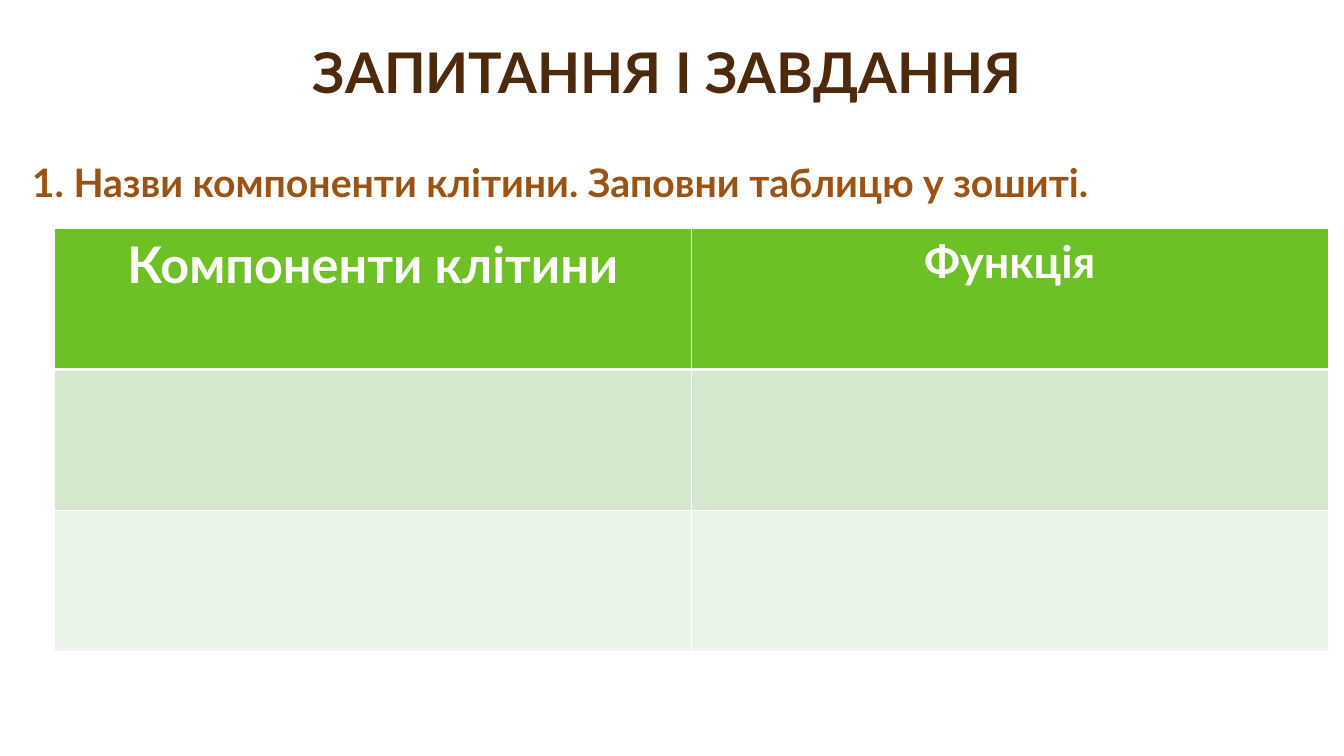
from lxml import etree
from pptx import Presentation
from pptx.dml.color import RGBColor
from pptx.enum.text import MSO_ANCHOR, MSO_AUTO_SIZE, PP_ALIGN
from pptx.oxml.ns import qn
from pptx.util import Pt

CENTER, LEFT = PP_ALIGN.CENTER, PP_ALIGN.LEFT
BOTTOM = MSO_ANCHOR.BOTTOM
NO_AUTOFIT, GROW = MSO_AUTO_SIZE.NONE, MSO_AUTO_SIZE.SHAPE_TO_FIT_TEXT
TITLE_ONLY = 5
FONT = "Lato"
WHITE, BROWN, RUST = "FFFFFF", "4D2A0B", "9A5315"
ROW_FILLS = ["6DC025", "D4E8CD", "EBF4E8"]
HEADERS = [("Компоненти клітини", 36), ("Функція", 32)]
ROW_HEIGHT, COLUMN_WIDTH = 100.6, 455


def color(code):
    """Turn a hex string into a colour."""
    return RGBColor.from_string(code)


def write(frame, text, size, code, align):
    """Write one bold run into the first paragraph of a text frame."""
    para = frame.paragraphs[0]
    para.alignment = align
    span = para.add_run()
    span.text = text
    span.font.name = FONT
    span.font.size = Pt(size)
    span.font.bold = True
    span.font.color.rgb = color(code)
    return para


def add_title(page, text):
    """Place and fill the title placeholder."""
    title = page.shapes.title
    title.left, title.top, title.width, title.height = Pt(80.6), Pt(23), Pt(792), Pt(56.2)
    frame = title.text_frame
    frame.auto_size = NO_AUTOFIT
    frame.vertical_anchor = BOTTOM
    write(frame, text, 40, BROWN, CENTER).line_spacing = 0.9


def add_task(page, text):
    """Add the line that states the task."""
    box = page.shapes.add_textbox(Pt(15.8), Pt(109.4), Pt(902.9), Pt(41))
    box.text_frame.word_wrap = False
    box.text_frame.auto_size = GROW
    write(box.text_frame, text, 28, RUST, LEFT)


def border_cell(cell, widths):
    """Draw white borders of the given widths, keyed by side."""
    properties = cell._tc.get_or_add_tcPr()
    for side, width in widths.items():
        line = etree.SubElement(properties, qn(f"a:ln{side}"), w=str(Pt(width)))
        fill = etree.SubElement(line, qn("a:solidFill"))
        etree.SubElement(fill, qn("a:srgbClr"), val=WHITE)


def add_cell_table(page):
    """Add the table with a header row and empty rows to fill in."""
    rows, columns = len(ROW_FILLS), len(HEADERS)
    table = page.shapes.add_table(
        rows, columns, Pt(38.9), Pt(163.4),
        Pt(columns * COLUMN_WIDTH), Pt(rows * ROW_HEIGHT)).table
    for column in table.columns:
        column.width = Pt(COLUMN_WIDTH)
    for index, code in enumerate(ROW_FILLS):
        table.rows[index].height = Pt(ROW_HEIGHT)
        for cell in table.rows[index].cells:
            border_cell(cell, {"L": 1, "R": 1, "T": 3 if index == 1 else 1,
                               "B": 3 if index == 0 else 1})
            cell.fill.solid()
            cell.fill.fore_color.rgb = color(code)
    for cell, (text, size) in zip(table.rows[0].cells, HEADERS):
        write(cell.text_frame, text, size, WHITE, CENTER)


def main():
    """Build the slide and save the deck."""
    deck = Presentation()
    deck.slide_width, deck.slide_height = Pt(960), Pt(540)
    page = deck.slides.add_slide(deck.slide_layouts[TITLE_ONLY])
    add_title(page, "ЗАПИТАННЯ І ЗАВДАННЯ")
    add_task(page, "1. Назви компоненти клітини. Заповни таблицю у зошиті.")
    add_cell_table(page)
    deck.save("out.pptx")


if __name__ == "__main__":
    main()
